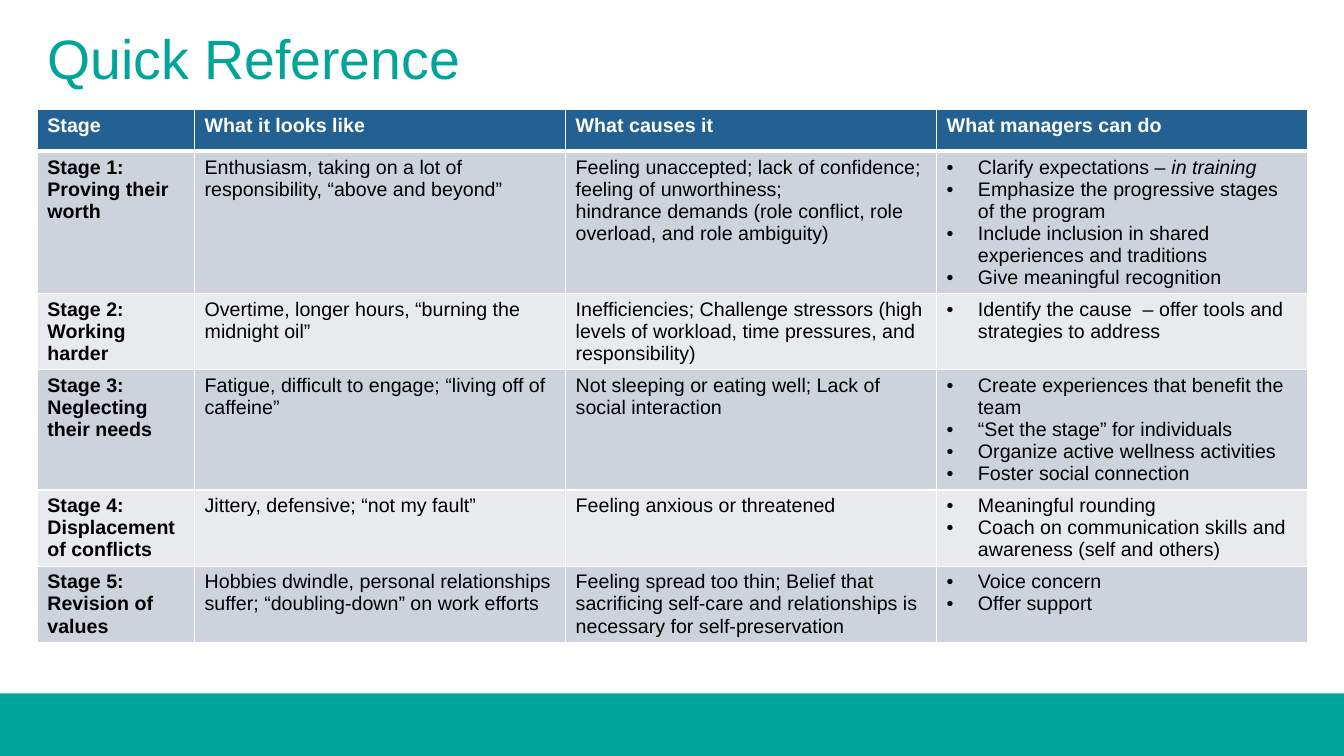
from lxml import etree
from pptx import Presentation
from pptx.dml.color import RGBColor
from pptx.enum.shapes import MSO_SHAPE
from pptx.enum.text import MSO_ANCHOR, MSO_AUTO_SIZE, PP_ALIGN
from pptx.oxml.ns import qn
from pptx.util import Inches, Pt

RECTANGLE = MSO_SHAPE.RECTANGLE
BOTTOM = MSO_ANCHOR.BOTTOM
LEFT = PP_ALIGN.LEFT
NO_AUTOFIT = MSO_AUTO_SIZE.NONE

TEAL = RGBColor(0x00, 0xA4, 0x99)
BLUE = RGBColor(0x23, 0x61, 0x92)
DARK_BAND = RGBColor(0xCD, 0xD2, 0xDC)
LIGHT_BAND = RGBColor(0xE8, 0xEA, 0xEE)
WHITE = RGBColor(0xFF, 0xFF, 0xFF)
BLACK = RGBColor(0x00, 0x00, 0x00)

FONT = "Arial"
COLUMN_WIDTHS = (1.56, 3.68, 3.68, 3.68)
ROW_HEIGHT = 0.41
BULLET_INDENT = Inches(0.31)
ACTIONS_COLUMN = 3

HEADERS = ("Stage", "What it looks like", "What causes it", "What managers can do")

# Each cell is a list of paragraphs; a tuple holds plain text and an italic ending
STAGES = [
    (["Stage 1: Proving their worth"],
     ["Enthusiasm, taking on a lot of responsibility, “above and beyond”"],
     ["Feeling unaccepted; lack of confidence; feeling of unworthiness;",
      "hindrance demands (role conflict, role overload, and role ambiguity)"],
     [("Clarify expectations – ", "in training"),
      "Emphasize the progressive stages of the program",
      "Include inclusion in shared experiences and traditions",
      "Give meaningful recognition"]),
    (["Stage 2: Working harder"],
     ["Overtime, longer hours, “burning the midnight oil”"],
     ["Inefficiencies; Challenge stressors (high levels of workload, "
      "time pressures, and responsibility)"],
     ["Identify the cause  – offer tools and strategies to address"]),
    (["Stage 3: Neglecting their needs"],
     ["Fatigue, difficult to engage; “living off of  caffeine”"],
     ["Not sleeping or eating well; Lack of social interaction"],
     ["Create experiences that benefit the team",
      "“Set the stage” for individuals",
      "Organize active wellness activities",
      "Foster social connection"]),
    (["Stage 4: Displacement of conflicts"],
     ["Jittery, defensive; “not my fault”"],
     ["Feeling anxious or threatened"],
     ["Meaningful rounding",
      "Coach on communication skills and awareness (self and others)"]),
    (["Stage 5: Revision of values"],
     ["Hobbies dwindle, personal relationships suffer; "
      "“doubling-down” on work efforts"],
     ["Feeling spread too thin; Belief that sacrificing self-care and "
      "relationships is necessary for self-preservation"],
     ["Voice concern", "Offer support"]),
]


def add_text(paragraph, text, size=14, color=BLACK, bold=False, italic=False):
    run = paragraph.add_run()
    run.text = text
    run.font.name = FONT
    run.font.size = Pt(size)
    run.font.color.rgb = color
    run.font.bold = bold
    run.font.italic = italic


def set_bullet(paragraph):
    properties = paragraph._p.get_or_add_pPr()
    properties.set("marL", str(BULLET_INDENT))
    properties.set("indent", str(-BULLET_INDENT))
    etree.SubElement(properties, qn("a:buFont"), typeface=FONT)
    etree.SubElement(properties, qn("a:buChar"), char="•")


def set_borders(cell, top, bottom):
    properties = cell._tc.get_or_add_tcPr()
    for side, width in (("lnL", 1), ("lnR", 1), ("lnT", top), ("lnB", bottom)):
        line = etree.SubElement(properties, qn(f"a:{side}"), w=str(Pt(width)))
        fill = etree.SubElement(line, qn("a:solidFill"))
        etree.SubElement(fill, qn("a:srgbClr"), val=str(WHITE))


def fill_cell(cell, paragraphs, bulleted=False, **text_format):
    text_frame = cell.text_frame
    for index, content in enumerate(paragraphs):
        paragraph = text_frame.add_paragraph() if index else text_frame.paragraphs[0]
        if bulleted:
            set_bullet(paragraph)
        plain, *endings = (content,) if isinstance(content, str) else content
        add_text(paragraph, plain, **text_format)
        for ending in endings:
            add_text(paragraph, ending, italic=True, **text_format)


def add_title(slide, left, top, width, height):
    title = slide.shapes.title
    title.left, title.top = Inches(left), Inches(top)
    title.width, title.height = Inches(width), Inches(height)
    title.text_frame.auto_size = NO_AUTOFIT
    title.text_frame.vertical_anchor = BOTTOM
    paragraph = title.text_frame.paragraphs[0]
    paragraph.alignment = LEFT
    paragraph.line_spacing = 0.9
    add_text(paragraph, "Quick Reference", size=39.6, color=TEAL)


def add_footer_band(slide, left, top, width, height):
    band = slide.shapes.add_shape(
        RECTANGLE, Inches(left), Inches(top), Inches(width), Inches(height))
    band.shadow.inherit = False
    band.fill.solid()
    band.fill.fore_color.rgb = TEAL
    band.line.fill.background()


def add_stage_table(slide, left, top):
    row_count = len(STAGES) + 1
    table = slide.shapes.add_table(
        row_count, len(HEADERS), Inches(left), Inches(top),
        Inches(sum(COLUMN_WIDTHS)), Inches(ROW_HEIGHT * row_count)).table
    for column, width in zip(table.columns, COLUMN_WIDTHS):
        column.width = Inches(width)

    rows = [[[header] for header in HEADERS], *STAGES]
    for row_index, row in enumerate(rows):
        is_header = row_index == 0
        band_color = DARK_BAND if row_index % 2 else LIGHT_BAND
        for column_index, paragraphs in enumerate(row):
            cell = table.cell(row_index, column_index)
            set_borders(cell, top=3 if row_index == 1 else 1,
                        bottom=3 if is_header else 1)
            cell.fill.solid()
            cell.fill.fore_color.rgb = BLUE if is_header else band_color
            fill_cell(cell, paragraphs,
                      bulleted=not is_header and column_index == ACTIONS_COLUMN,
                      color=WHITE if is_header else BLACK,
                      bold=is_header or column_index == 0)


def main():
    presentation = Presentation()
    presentation.slide_width = Inches(13.33)
    presentation.slide_height = Inches(7.5)
    title_only = presentation.slide_layouts[5]
    slide = presentation.slides.add_slide(title_only)

    add_footer_band(slide, 0, 6.88, 13.33, 0.62)
    add_stage_table(slide, 0.37, 1.09)
    add_title(slide, 0.37, 0.31, 10.29, 0.65)
    presentation.save("out.pptx")


if __name__ == "__main__":
    main()
